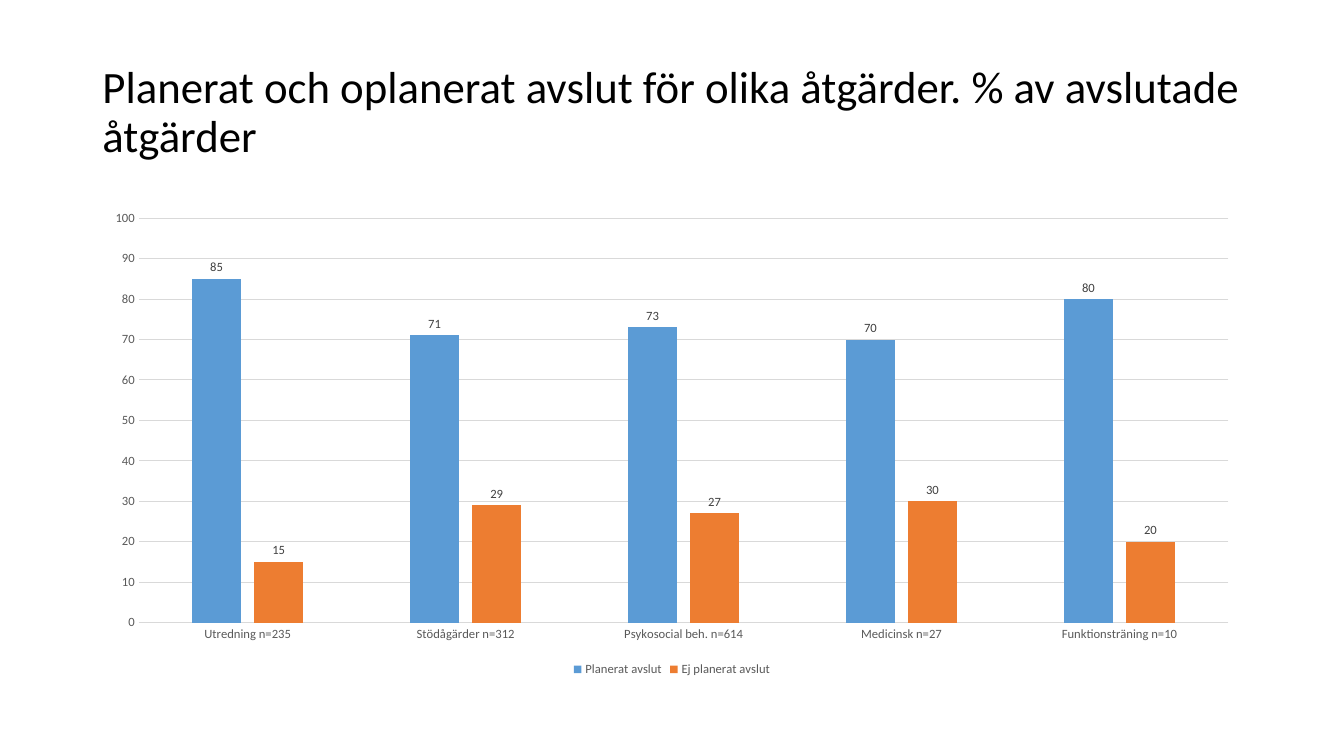
"""Builds a slide comparing planned and unplanned endings per type of measure."""
from dataclasses import dataclass

from pptx import Presentation
from pptx.chart.data import CategoryChartData
from pptx.dml.color import RGBColor
from pptx.enum.chart import (XL_CHART_TYPE, XL_LABEL_POSITION,
                             XL_LEGEND_POSITION, XL_TICK_MARK)
from pptx.enum.text import MSO_ANCHOR, MSO_AUTO_SIZE, PP_ALIGN
from pptx.util import Pt


@dataclass(frozen=True)
class Theme:
    typeface: str = "Calibri"
    title_size: float = 32
    chart_size: float = 10
    small_size: float = 9
    rule_width: float = 0.75
    ink: str = "000000"
    axis_text: str = "595959"
    label_text: str = "404040"
    rule: str = "D9D9D9"
    bars: tuple = ("5B9BD5", "ED7D31")


class SlideBuilder:
    def __init__(self, slide, theme):
        self.slide = slide
        self.theme = theme

    def style_font(self, font, size, color):
        font.name = self.theme.typeface
        font.size = Pt(size)
        font.color.rgb = RGBColor.from_string(color)

    def style_rule(self, line):
        line.color.rgb = RGBColor.from_string(self.theme.rule)
        line.width = Pt(self.theme.rule_width)

    def title(self, text, left, top, width, height):
        heading = self.slide.shapes.title
        heading.left, heading.top = Pt(left), Pt(top)
        heading.width, heading.height = Pt(width), Pt(height)
        frame = heading.text_frame
        frame.text = text
        frame.word_wrap = True
        frame.auto_size = MSO_AUTO_SIZE.NONE
        frame.vertical_anchor = MSO_ANCHOR.MIDDLE
        paragraph = frame.paragraphs[0]
        paragraph.alignment = PP_ALIGN.LEFT
        paragraph.line_spacing = 0.9
        self.style_font(paragraph.font, self.theme.title_size, self.theme.ink)

    def column_chart(self, categories, series, left, top, width, height):
        theme = self.theme
        data = CategoryChartData(number_format="0")
        data.categories = categories
        for name, values in series.items():
            data.add_series(name, values)
        chart = self.slide.shapes.add_chart(
            XL_CHART_TYPE.COLUMN_CLUSTERED,
            Pt(left), Pt(top), Pt(width), Pt(height), data).chart
        self.style_font(chart.font, theme.chart_size, theme.ink)
        chart.has_title = False
        chart.has_legend = True
        chart.legend.position = XL_LEGEND_POSITION.BOTTOM
        chart.legend.include_in_layout = False
        self.style_font(chart.legend.font, theme.small_size, theme.axis_text)
        self.axes(chart)
        self.columns(chart.plots[0])

    def axes(self, chart):
        for axis in (chart.category_axis, chart.value_axis):
            axis.major_tick_mark = XL_TICK_MARK.NONE
            axis.minor_tick_mark = XL_TICK_MARK.NONE
            self.style_font(axis.tick_labels.font, self.theme.small_size,
                            self.theme.axis_text)
        self.style_rule(chart.category_axis.format.line)
        scale = chart.value_axis
        scale.minimum_scale, scale.maximum_scale = 0, 100
        scale.major_unit = 10
        scale.format.line.fill.background()
        self.style_rule(scale.major_gridlines.format.line)

    def columns(self, plot):
        plot.gap_width = 219
        plot.overlap = -27
        plot.vary_by_categories = False
        for series, color in zip(plot.series, self.theme.bars):
            series.invert_if_negative = False
            series.format.fill.solid()
            series.format.fill.fore_color.rgb = RGBColor.from_string(color)
            series.format.line.fill.background()
            labels = series.data_labels
            labels.show_value = True
            labels.position = XL_LABEL_POSITION.OUTSIDE_END
            self.style_font(labels.font, self.theme.small_size,
                            self.theme.label_text)


def main():
    deck = Presentation()
    deck.slide_width, deck.slide_height = Pt(960), Pt(540)
    builder = SlideBuilder(deck.slides.add_slide(deck.slide_layouts[5]), Theme())
    builder.title(
        "Planerat och oplanerat avslut för olika åtgärder. % av avslutade åtgärder",
        66, 28.75, 828, 104.4)
    builder.column_chart(
        ["Utredning n=235", "Stödågärder n=312", "Psykosocial beh. n=614",
         "Medicinsk n=27", "Funktionsträning n=10"],
        {"Planerat avslut": (85, 71, 73, 70, 80),
         "Ej planerat avslut": (15, 29, 27, 30, 20)},
        66, 143.75, 828, 342.6)
    deck.save("out.pptx")


if __name__ == "__main__":
    main()
